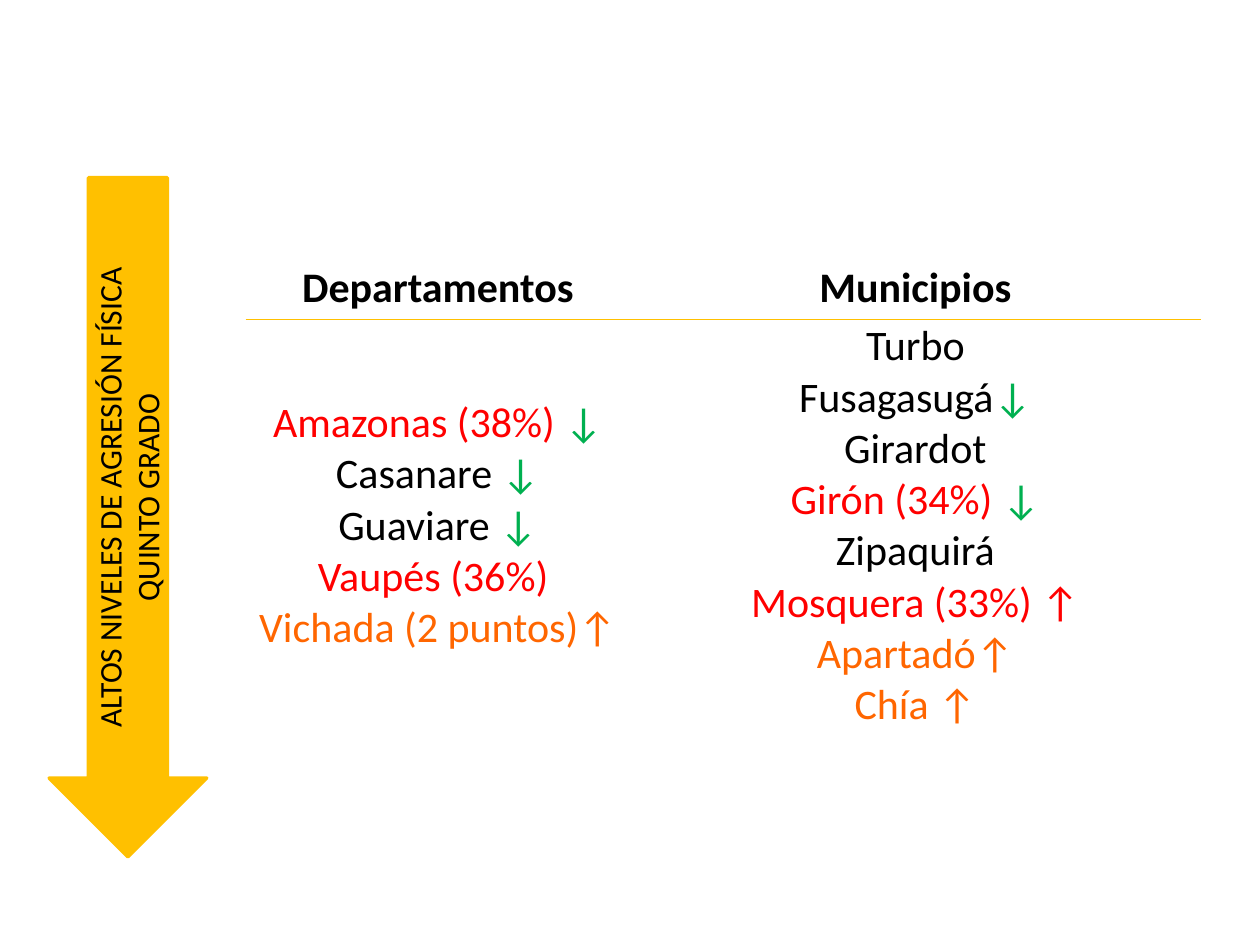
from lxml.etree import SubElement
from pptx import Presentation
from pptx.dml.color import RGBColor
from pptx.enum.shapes import MSO_SHAPE
from pptx.enum.text import MSO_ANCHOR, PP_ALIGN
from pptx.oxml.ns import qn
from pptx.util import Inches, Pt

COLORS = {
    "gold": "FFC000",
    "black": "000000",
    "red": "FF0000",
    "green": "00B050",
    "orange": "FF6600",
}
DEPARTAMENTOS = [
    [("Amazonas (38%)", "red"), (" ↓", "green")],
    [("Casanare ", "black"), ("↓", "green")],
    [("Guaviare ", "black"), ("↓", "green")],
    [("Vaupés (36%) ", "red")],
    [("Vichada (2 puntos)↑", "orange")],
]
MUNICIPIOS = [
    [("Turbo", "black")],
    [("Fusagasugá", "black"), ("↓", "green")],
    [("Girardot", "black")],
    [("Girón (34%)", "red"), (" ↓", "green")],
    [("Zipaquirá", "black")],
    [("Mosquera (33%) ↑", "red")],
    [("Apartadó↑", "orange")],
    [("Chía ↑", "orange")],
]


def rgb(name):
    return RGBColor.from_string(COLORS[name])


def format_paragraph(p, size, bold=False):
    p.alignment = PP_ALIGN.CENTER
    p.font.name = "Calibri"
    p.font.size = Pt(size)
    p.font.bold = bold


def add_down_arrow(slide, lines):
    sp = slide.shapes.add_shape(
        MSO_SHAPE.DOWN_ARROW, Inches(0.39), Inches(1.41), Inches(1.25), Inches(5.39)
    )
    sp.shadow.inherit = False
    sp.fill.solid()
    sp.fill.fore_color.rgb = rgb("gold")
    sp.line.color.rgb = rgb("gold")
    sp.line.width = Pt(2)
    tf = sp.text_frame
    tf.word_wrap = True
    tf.vertical_anchor = MSO_ANCHOR.MIDDLE
    tf._txBody.bodyPr.set("vert", "vert270")
    p = tf.paragraphs[0]
    p.text = "\v".join(lines)
    format_paragraph(p, 18)
    p.font.color.rgb = rgb("black")


def set_borders(cell, gold_side):
    tc_pr = cell._tc.get_or_add_tcPr()
    for side in "LRTB":
        ln = SubElement(tc_pr, qn(f"a:ln{side}"), w=str(Pt(1)))
        if side == gold_side:
            fill = SubElement(ln, qn("a:solidFill"))
            SubElement(fill, qn("a:srgbClr"), val=COLORS["gold"])
        else:
            SubElement(ln, qn("a:noFill"))


def fill_cell(cell, lines, gold_side, bold=False):
    set_borders(cell, gold_side)
    cell.fill.background()
    cell.vertical_anchor = MSO_ANCHOR.MIDDLE
    tf = cell.text_frame
    for i, runs in enumerate(lines):
        p = tf.add_paragraph() if i else tf.paragraphs[0]
        format_paragraph(p, 24, bold)
        for text, color in runs:
            r = p.add_run()
            r.text = text
            r.font.color.rgb = rgb(color)


def add_places_table(slide, columns):
    table = slide.shapes.add_table(
        2, len(columns), Inches(1.95), Inches(2.03), Inches(7.58), Inches(3.71)
    ).table
    table.first_row = False
    table.horz_banding = False
    for row, height in zip(table.rows, (0.5, 3.21)):
        row.height = Inches(height)
    for i, (heading, width, places) in enumerate(columns):
        table.columns[i].width = Inches(width)
        fill_cell(table.cell(0, i), [[(heading, "black")]], "B", bold=True)
        body = table.cell(1, i)
        body.margin_left = body.margin_right = body.margin_top = Inches(0.01)
        body.margin_bottom = 0
        fill_cell(body, places, "T")


def main():
    prs = Presentation()
    prs.slide_width = Inches(10)
    prs.slide_height = Inches(7.5)
    slide = prs.slides.add_slide(prs.slide_layouts[6])
    add_down_arrow(slide, ["ALTOS NIVELES DE AGRESIÓN FÍSICA", "QUINTO GRADO"])
    add_places_table(
        slide,
        [("Departamentos", 3.05, DEPARTAMENTOS), ("Municipios", 4.53, MUNICIPIOS)],
    )
    prs.save("out.pptx")


if __name__ == "__main__":
    main()
